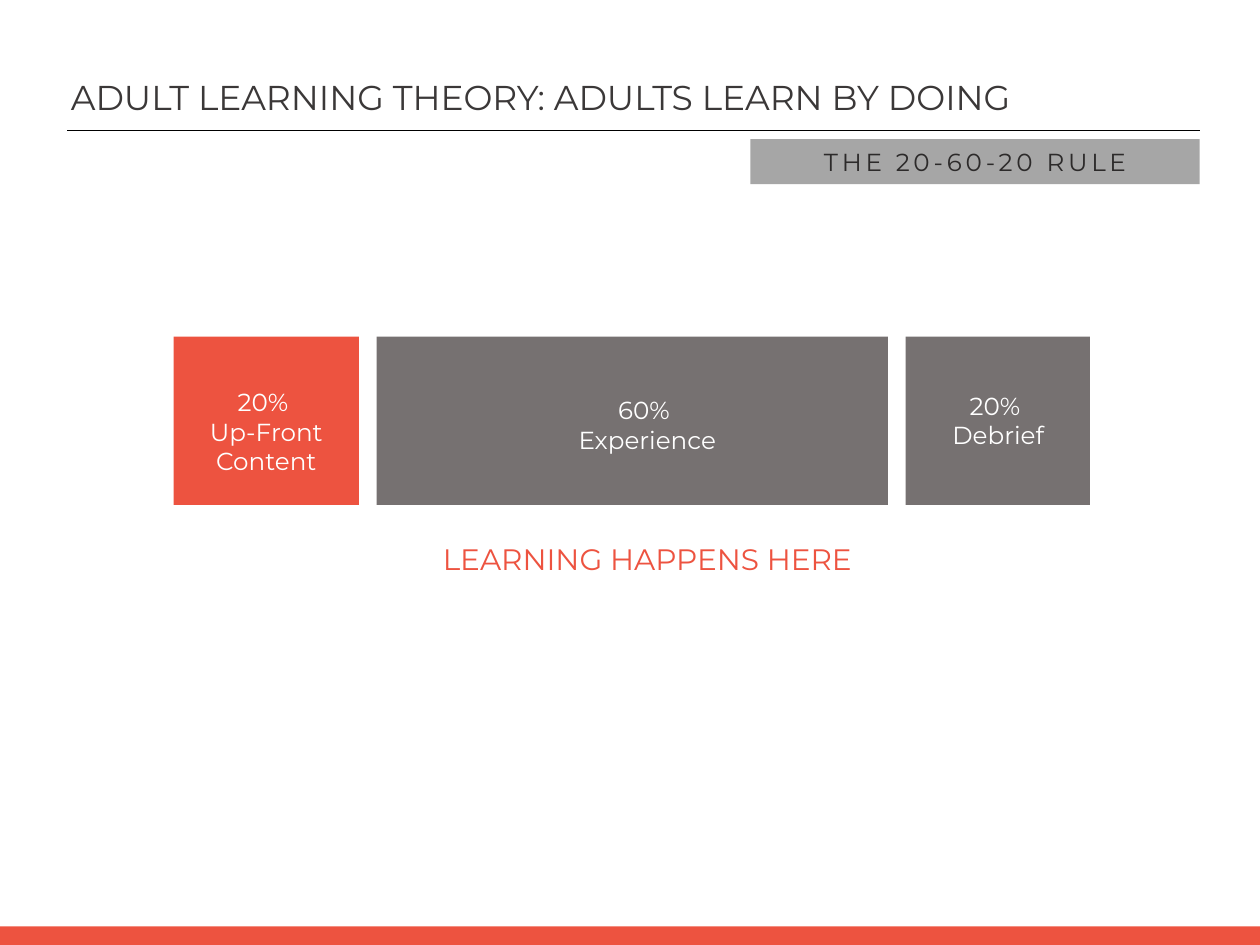
from pptx import Presentation
from pptx.dml.color import RGBColor
from pptx.enum.shapes import MSO_CONNECTOR, MSO_SHAPE
from pptx.enum.text import MSO_ANCHOR, MSO_AUTO_SIZE, PP_ALIGN
from pptx.oxml.ns import qn
from pptx.util import Inches, Pt
from lxml import etree

FONT = "Montserrat"
RED = RGBColor(0xED, 0x53, 0x40)
DARK_GRAY = RGBColor(0x76, 0x71, 0x71)
LIGHT_GRAY = RGBColor(0xA6, 0xA6, 0xA6)
TITLE_INK = RGBColor(0x3B, 0x38, 0x38)
RULE_INK = RGBColor(0x2C, 0x2A, 0x2A)
BLACK = RGBColor(0, 0, 0)
WHITE = RGBColor(0xFF, 0xFF, 0xFF)

SLIDE_WIDTH, SLIDE_HEIGHT = 14.22, 10.67
RIGHT_EDGE = 13.54
BAR_LEFT, BAR_TOP, BAR_HEIGHT, BAR_GAP = 1.96, 3.8, 1.9, 0.2

# Block width, fill, text, then label left, top, width and height
PHASES = [
    (2.09, RED, "20% \nUp-Front Content", (1.96, 4.32, 2.09, 1.11)),
    (5.77, DARK_GRAY, "60% \nExperience", (5.71, 4.41, 3.19, 0.77)),
    (2.08, DARK_GRAY, "20% \nDebrief", (10.22, 4.36, 2.09, 0.77)),
]


def write_text(shape, text, size, color, align=PP_ALIGN.CENTER,
               anchor=MSO_ANCHOR.TOP, spacing=0):
    frame = shape.text_frame
    frame.text = text
    frame.word_wrap = True
    frame.auto_size = MSO_AUTO_SIZE.NONE
    frame.vertical_anchor = anchor
    for paragraph in frame.paragraphs:
        paragraph.alignment = align
        for run in paragraph.runs:
            run.font.name = FONT
            run.font.size = Pt(size)
            run.font.color.rgb = color
            if spacing:
                run.font._element.set("spc", str(spacing * 100))


def add_block(slide, left, top, width, height, fill):
    block = slide.shapes.add_shape(
        MSO_SHAPE.RECTANGLE, Inches(left), Inches(top), Inches(width), Inches(height))
    block.shadow.inherit = False
    block.fill.solid()
    block.fill.fore_color.rgb = fill
    block.line.fill.background()
    return block


def add_label(slide, box, text, size, color, **style):
    label = slide.shapes.add_textbox(*[Inches(length) for length in box])
    write_text(label, text, size, color, **style)


def add_title(slide, text):
    title = slide.shapes.title
    title.left, title.top = Inches(0.7), Inches(0.81)
    title.width, title.height = Inches(12.86), Inches(0.57)
    write_text(title, text, 28, TITLE_INK, align=PP_ALIGN.LEFT)


def add_rule(slide, left, right, y):
    rule = slide.shapes.add_connector(
        MSO_CONNECTOR.STRAIGHT, Inches(left), Inches(y), Inches(right), Inches(y))
    rule.line.color.rgb = BLACK
    rule.line.width = Pt(1)
    etree.SubElement(rule._element.spPr, qn("a:effectLst"))


def main():
    deck = Presentation()
    deck.slide_width, deck.slide_height = Inches(SLIDE_WIDTH), Inches(SLIDE_HEIGHT)
    slide = deck.slides.add_slide(deck.slide_layouts[5])

    # Footer band
    add_block(slide, 0, 10.46, SLIDE_WIDTH, SLIDE_HEIGHT - 10.46, RED)

    # Phases of the 20-60-20 rule
    left = BAR_LEFT
    for width, fill, text, label_box in PHASES:
        add_block(slide, left, BAR_TOP, width, BAR_HEIGHT, fill)
        add_label(slide, label_box, text, 20, WHITE)
        left += width + BAR_GAP
    add_label(slide, (4.42, 6.06, 5.77, 0.5), "LEARNING HAPPENS HERE", 24, RED,
              anchor=MSO_ANCHOR.MIDDLE)

    # Heading
    add_title(slide, "ADULT LEARNING THEORY: ADULTS LEARN BY DOING")
    add_rule(slide, 0.76, RIGHT_EDGE, 1.47)
    subtitle = add_block(slide, 8.47, 1.57, RIGHT_EDGE - 8.47, 0.51, LIGHT_GRAY)
    write_text(subtitle, "THE 20-60-20 RULE", 20, RULE_INK,
               anchor=MSO_ANCHOR.MIDDLE, spacing=3)

    deck.save("out.pptx")


if __name__ == "__main__":
    main()
